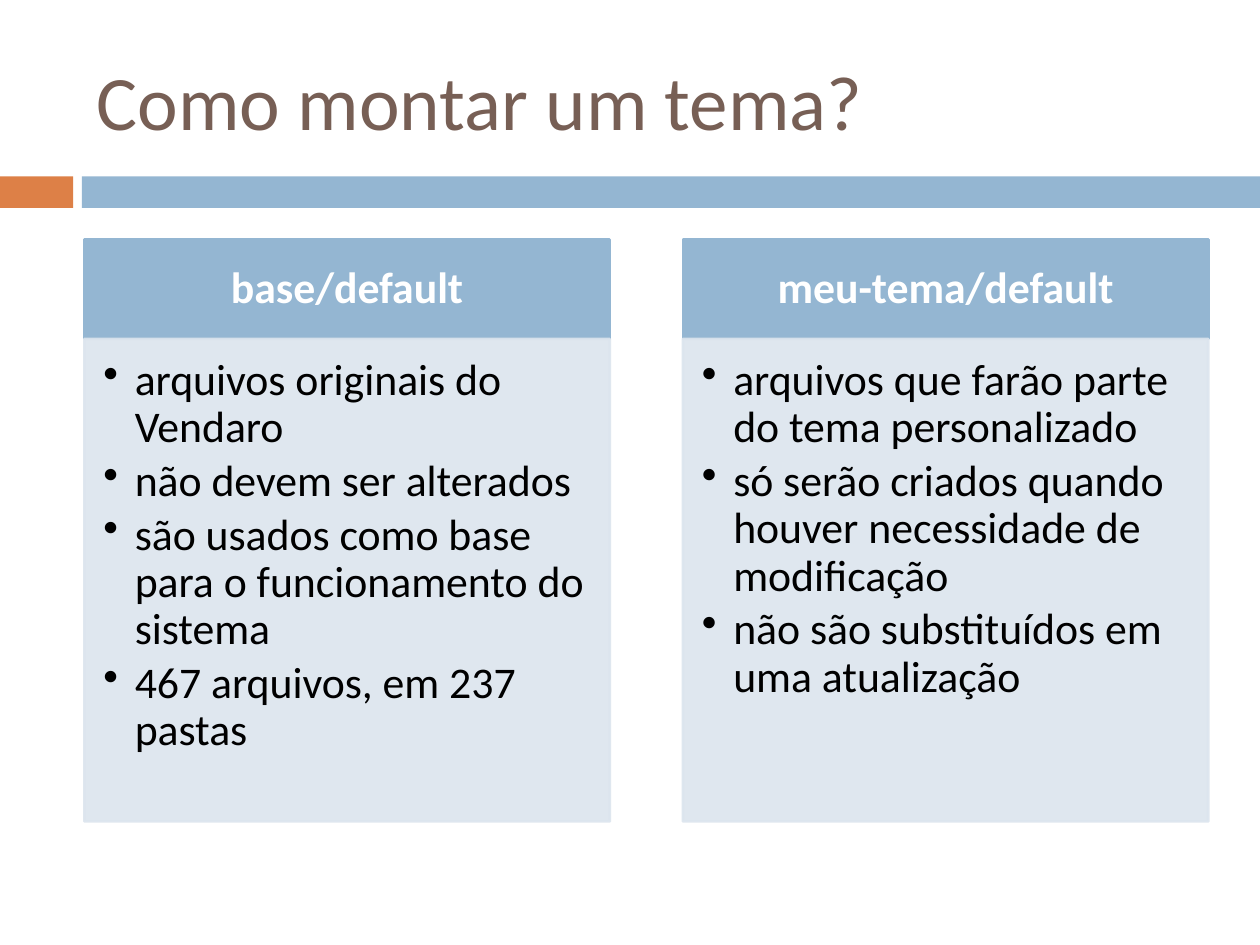
import dataclasses

import pptx
import pptx.dml.color
import pptx.enum.shapes
import pptx.enum.text
import pptx.oxml.ns
import pptx.util
import lxml.etree

ALIGN = pptx.enum.text.PP_ALIGN
ANCHOR = pptx.enum.text.MSO_ANCHOR
INCH = pptx.util.Inches


@dataclasses.dataclass(frozen=True)
class Theme:
    font: str = "Calibri"
    brown: str = "775F55"
    orange: str = "DD8047"
    blue: str = "94B6D2"
    pale: str = "DCE5EE"
    white: str = "FFFFFF"
    black: str = "000000"
    title: int = 44
    text: int = 25
    edge: float = 1.5


@dataclasses.dataclass(frozen=True)
class Grid:
    wide: float = 10
    high: float = 7.5
    left: float = 0.67
    col: float = 4.17
    gap: float = 0.58
    top: float = 1.9
    head: float = 0.79
    body: float = 3.83

    def start(self, index):
        return self.left + index * (self.col + self.gap)


THEME = Theme()
GRID = Grid()

CARDS = [
    ("base/default", [
        "arquivos originais do Vendaro",
        "não devem ser alterados",
        "são usados como base para o funcionamento do sistema",
        "467 arquivos, em 237 pastas",
    ]),
    ("meu-tema/default", [
        "arquivos que farão parte do tema personalizado",
        "só serão criados quando houver necessidade de modificação",
        "não são substituídos em uma atualização",
    ]),
]


def color(code):
    return pptx.dml.color.RGBColor.from_string(code)


def add_node(parent, tag, **values):
    name = pptx.oxml.ns.qn(tag)
    return lxml.etree.SubElement(parent, name, **values)


def add_mark(para):
    props = para._p.get_or_add_pPr()
    props.set("marL", str(INCH(0.25)))
    props.set("indent", str(-INCH(0.25)))
    add_node(props, "a:buChar", char="•")


def put_text(shape, lines, size, ink, bold=False, align=ALIGN.LEFT,
             anchor=ANCHOR.TOP, inset=(0.1, 0.05, 0.1, 0.05),
             space=1.0, after=0, marks=False):
    frame = shape.text_frame
    frame.word_wrap = True
    frame.vertical_anchor = anchor
    (frame.margin_left, frame.margin_top,
     frame.margin_right, frame.margin_bottom) = map(INCH, inset)
    for index, line in enumerate(lines):
        para = frame.add_paragraph() if index else frame.paragraphs[0]
        para.alignment = align
        para.line_spacing = space
        para.space_after = pptx.util.Pt(after)
        if marks:
            add_mark(para)
        run = para.add_run()
        run.text = line
        run.font.name = THEME.font
        run.font.size = pptx.util.Pt(size)
        run.font.bold = bold
        run.font.color.rgb = color(ink)


def add_box(slide, place, fill, edge=0, alpha=100):
    kind = pptx.enum.shapes.MSO_SHAPE.RECTANGLE
    box = slide.shapes.add_shape(kind, *map(INCH, place))
    box.shadow.inherit = False
    box.fill.solid()
    box.fill.fore_color.rgb = color(fill)
    if edge:
        box.line.color.rgb = color(fill)
        box.line.width = pptx.util.Pt(edge)
    else:
        box.line.fill.background()
    if alpha < 100:
        for paint in box._element.spPr.iter(pptx.oxml.ns.qn("a:srgbClr")):
            add_node(paint, "a:alpha", val=str(alpha * 1000))
    return box


def add_title(slide, text):
    place = (GRID.left, 0.25, GRID.start(1) + GRID.col - GRID.left, 1.08)
    box = slide.shapes.add_textbox(*map(INCH, place))
    put_text(box, [text], THEME.title, THEME.brown, anchor=ANCHOR.MIDDLE)


def add_band(slide):
    top, high, left = 1.4, 0.25, 0.65
    add_box(slide, (0, top, 0.58, high), THEME.orange)
    add_box(slide, (left, top, GRID.wide - left, high), THEME.blue)


def add_card(slide, index, name, items):
    left = GRID.start(index)
    head = add_box(slide, (left, GRID.top, GRID.col, GRID.head),
                   THEME.blue, THEME.edge)
    put_text(head, [name], THEME.text, THEME.white, bold=True,
             align=ALIGN.CENTER, anchor=ANCHOR.MIDDLE,
             inset=(0.19, 0.11, 0.19, 0.11), space=0.9)
    body = add_box(slide, (left, GRID.top + GRID.head, GRID.col, GRID.body),
                   THEME.pale, THEME.edge, alpha=90)
    put_text(body, items, THEME.text, THEME.black,
             inset=(0.15, 0.15, 0.19, 0.22), space=0.9, after=3.75,
             marks=True)


def main():
    deck = pptx.Presentation()
    deck.slide_width = INCH(GRID.wide)
    deck.slide_height = INCH(GRID.high)
    slide = deck.slides.add_slide(deck.slide_layouts[6])
    add_band(slide)
    add_title(slide, "Como montar um tema?")
    for index, (name, items) in enumerate(CARDS):
        add_card(slide, index, name, items)
    deck.save("out.pptx")


if __name__ == "__main__":
    main()
